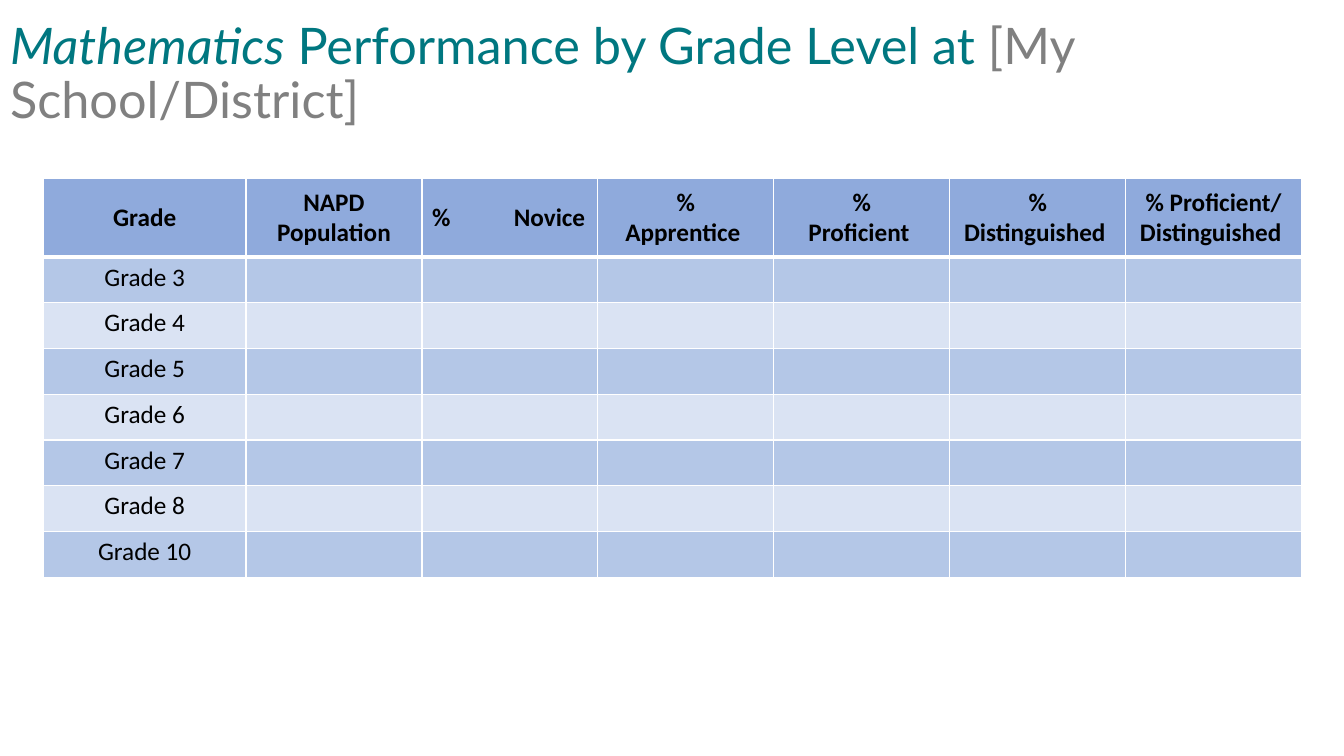
"""Build a slide with a table of mathematics performance by grade level."""
import lxml.etree
import pptx
import pptx.dml.color
import pptx.enum.text
import pptx.oxml.ns
import pptx.util

Inches = pptx.util.Inches
Color = pptx.dml.color.RGBColor.from_string
Align = pptx.enum.text.PP_ALIGN
Anchor = pptx.enum.text.MSO_ANCHOR
qn = pptx.oxml.ns.qn

THEME = {
    "teal": "007780", "gray": "808080", "text": "000000", "border": "FFFFFF",
    "header": "8FAADC", "bands": ("B4C7E7", "DAE3F3"),
    "title_font": "Lato", "table_font": "Calibri", "title_size": 36, "table_size": 18,
}
HEADERS = ["Grade", "NAPD Population", "%\tNovice", "%\nApprentice ",
           "%\nProficient ", "% Distinguished ", "% Proficient/\nDistinguished "]
GRADES = [3, 4, 5, 6, 7, 8, 10]
TABLE_LEFT, TABLE_TOP, TABLE_WIDTH, TABLE_HEIGHT = 0.43, 1.77, 12.48, 3.96
GRADE_WIDTH, HEADER_HEIGHT, NOVICE_TAB = 2.01, 0.78, 1.52


def format_font(font, color, **values):
    """Set the colour and the given values of a font."""
    font.color.rgb = Color(color)
    for name, value in values.items():
        setattr(font, name, value)


def add_borders(cell, bottom_width):
    """Draw the four borders of a cell ahead of its fill."""
    properties = cell._tc.get_or_add_tcPr()
    widths = {"a:lnL": 1, "a:lnR": 1, "a:lnT": 1, "a:lnB": bottom_width}
    for position, (tag, width) in enumerate(widths.items()):
        line = lxml.etree.Element(qn(tag), w=str(pptx.util.Pt(width)))
        fill = lxml.etree.SubElement(line, qn("a:solidFill"))
        lxml.etree.SubElement(fill, qn("a:srgbClr"), val=THEME["border"])
        properties.insert(position, line)


presentation = pptx.Presentation()
presentation.slide_width, presentation.slide_height = Inches(13.33), Inches(7.5)
slide = presentation.slides.add_slide(presentation.slide_layouts[5])

title = slide.shapes.title
title_box = {"left": 0, "top": 0.02, "width": 11.5, "height": 1.45}
for name, value in title_box.items():
    setattr(title, name, Inches(value))
frame_format = {"word_wrap": True, "vertical_anchor": Anchor.MIDDLE,
                "auto_size": pptx.enum.text.MSO_AUTO_SIZE.NONE}
for name, value in frame_format.items():
    setattr(title.text_frame, name, value)
paragraph = title.text_frame.paragraphs[0]
paragraph.alignment, paragraph.line_spacing = Align.LEFT, 0.9
for text, color, italic in [("Mathematics", "teal", True),
                            (" Performance by Grade Level at ", "teal", False),
                            ("[My School/District]", "gray", False)]:
    run = paragraph.add_run()
    run.text = text
    format_font(run.font, THEME[color], name=THEME["title_font"],
                size=pptx.util.Pt(THEME["title_size"]), italic=italic)

rows = [HEADERS] + [[f"Grade {grade}"] + [""] * (len(HEADERS) - 1) for grade in GRADES]
table = slide.shapes.add_table(
    len(rows), len(HEADERS), Inches(TABLE_LEFT), Inches(TABLE_TOP),
    Inches(TABLE_WIDTH), Inches(TABLE_HEIGHT)).table
for index, column in enumerate(table.columns):
    score_width = (TABLE_WIDTH - GRADE_WIDTH) / (len(HEADERS) - 1)
    column.width = Inches(score_width if index else GRADE_WIDTH)
for index, row in enumerate(table.rows):
    grade_height = (TABLE_HEIGHT - HEADER_HEIGHT) / len(GRADES)
    row.height = Inches(grade_height if index else HEADER_HEIGHT)

for row_index, texts in enumerate(rows):
    is_header = row_index == 0
    fill_color = THEME["header"] if is_header else THEME["bands"][(row_index - 1) % 2]
    for column_index, text in enumerate(texts):
        cell = table.cell(row_index, column_index)
        cell.fill.solid()
        cell.fill.fore_color.rgb = Color(fill_color)
        add_borders(cell, 3 if is_header else 1)
        cell.vertical_anchor = Anchor.MIDDLE if is_header else Anchor.TOP
        cell.text_frame.text = text
        for paragraph in cell.text_frame.paragraphs:
            paragraph.alignment = Align.LEFT if "\t" in text else Align.CENTER
            format_font(paragraph.font, THEME["text"], name=THEME["table_font"],
                        size=pptx.util.Pt(THEME["table_size"]), bold=is_header)
            for run in paragraph.runs:
                format_font(run.font, THEME["text"], name=THEME["table_font"],
                            size=pptx.util.Pt(THEME["table_size"]), bold=is_header)
            if "\t" in text:
                tabs = lxml.etree.Element(qn("a:tabLst"))
                lxml.etree.SubElement(tabs, qn("a:tab"), pos=str(Inches(NOVICE_TAB)), algn="r")
                paragraph._p.get_or_add_pPr().insert(0, tabs)

presentation.save("out.pptx")
